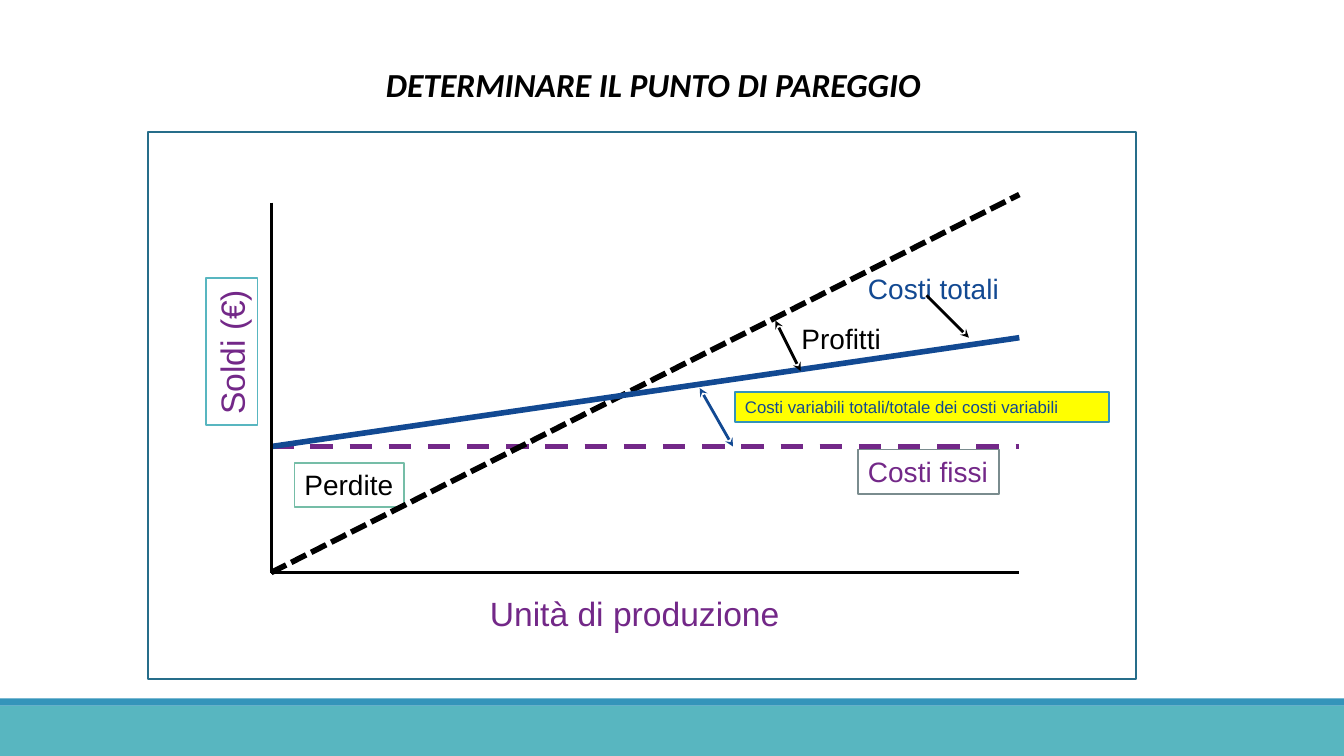
from dataclasses import dataclass

from lxml import etree
from pptx import Presentation
from pptx.dml.color import RGBColor
from pptx.enum.dml import MSO_LINE_DASH_STYLE as Dash
from pptx.enum.shapes import MSO_CONNECTOR as Connector, MSO_SHAPE as Shape
from pptx.enum.text import MSO_ANCHOR as Anchor, MSO_AUTO_SIZE as AutoSize, PP_ALIGN as Align
from pptx.oxml.ns import qn
from pptx.util import Inches, Pt

COLORS = {
    "white": "FFFFFF", "black": "000000", "yellow": "FFFF00",
    "teal": "58B6C0", "blue": "3494BA", "frame": "266D8A",
    "green": "75BDA7", "gray": "7A8C8E", "purple": "732888", "navy": "124992",
}
CELL = 0.1
COLUMNS, ROWS = 133.3, 75


@dataclass
class Box:
    left: float
    top: float
    width: float
    height: float

    def inner(self, left, top, width, height):
        return Box(self.left + left, self.top + top, width, height)

    def point(self, column, row):
        return cells(self.left + column), cells(self.top + row)

    def emu(self):
        return [cells(n) for n in (self.left, self.top, self.width, self.height)]


def cells(count):
    return Inches(count * CELL)


def color(name):
    return RGBColor.from_string(COLORS[name])


def apply(target, values):
    for name, value in values.items():
        setattr(target, name, value)


def add_rectangle(slide, box, fill, outline=None):
    shape = slide.shapes.add_shape(Shape.RECTANGLE, *box.emu())
    shape.shadow.inherit = False
    if fill:
        shape.fill.solid()
        shape.fill.fore_color.rgb = color(fill)
    else:
        shape.fill.background()
    if outline:
        shape.line.color.rgb = color(outline)
        shape.line.width = Pt(1.25)
    else:
        shape.line.fill.background()
    return shape


def add_label(slide, box, text, size, ink, fill=None, outline=None, wrap=False, rotation=0):
    shape = add_rectangle(slide, box, fill, outline)
    shape.rotation = rotation
    apply(shape.text_frame, {
        "word_wrap": wrap, "auto_size": AutoSize.SHAPE_TO_FIT_TEXT,
        "vertical_anchor": Anchor.TOP,
    })
    paragraph = shape.text_frame.paragraphs[0]
    apply(paragraph, {"text": text, "alignment": Align.LEFT})
    apply(paragraph.runs[0].font, {"name": "Arial", "size": Pt(size)})
    paragraph.runs[0].font.color.rgb = color(ink)


def add_line(slide, box, start, end, ink, width, dash=None, arrows=()):
    connector = slide.shapes.add_connector(
        Connector.STRAIGHT, *box.point(*start), *box.point(*end))
    connector.line.color.rgb = color(ink)
    apply(connector.line, {"width": Pt(width), "dash_style": dash})
    line_element = connector.line._get_or_add_ln()
    for arrow in arrows:
        etree.SubElement(line_element, qn(f"a:{arrow}"), type="stealth")
    etree.SubElement(connector._element.spPr, qn("a:effectLst"))


def add_title(slide, box, text):
    title = slide.shapes.title
    apply(title, dict(zip(("left", "top", "width", "height"), box.emu())))
    apply(title.text_frame, {"word_wrap": True, "vertical_anchor": Anchor.MIDDLE})
    paragraph = title.text_frame.paragraphs[0]
    apply(paragraph, {"text": text, "alignment": Align.CENTER})
    font = paragraph.runs[0].font
    apply(font, {"name": "Calibri", "size": Pt(24), "bold": True, "italic": True})
    font.color.rgb = color("black")


def add_footer(slide, box):
    stripe = 0.7
    add_rectangle(slide, box, "teal")
    add_rectangle(slide, box.inner(0, -stripe, box.width, stripe), "blue")


def add_break_even(slide, box):
    left, right = 12.2, 86.4
    base, fixed = 43.7, 31.2
    origin = left, base
    both = "headEnd", "tailEnd"

    def label(place, *style, **options):
        add_label(slide, box.inner(*place), *style, **options)

    def line(start, end, *style, **options):
        add_line(slide, box, start, end, *style, **options)

    add_rectangle(slide, box, "white", "frame")
    label((14.5, 32.8, 10.9, 4.4), "Perdite", 20, "black", "white", "green")
    line((left, fixed), (right, fixed), "purple", 4, Dash.DASH)
    label((70.4, 31.5, 14, 4.4), "Costi fissi", 20, "purple", "white", "gray")
    line(origin, (right, 6.2), "black", 4, Dash.SQUARE_DOT)
    line((left, fixed), (right, 20.4), "navy", 4)
    label((58.2, 25.8, 37.1, 3), "Costi variabili totali/totale dei costi variabili",
          12, "navy", "yellow", "blue", wrap=True)
    line((54.7, 25.4), (58, fixed), "navy", 2, arrows=both)
    label((70.4, 13.3, 15.1, 4.4), "Costi totali", 20, "navy")
    line((77.2, 16.2), (81.4, 20.4), "black", 2, arrows=both[1:])
    line((62.2, 18.7), (64.7, 23.7), "black", 2, arrows=both)
    label((63.8, 18.3, 10, 4.4), "Profitti", 20, "black")
    line((left, 7), origin, "black", 2)
    line(origin, (right, base), "black", 2)
    label((32.9, 45.2, 31, 5.1), "Unità di produzione", 24, "purple", "white")
    label((1, 19.2, 14.6, 5.1), "Soldi (€)", 24, "purple", "white", "teal", rotation=270)


def main():
    presentation = Presentation()
    presentation.slide_width, presentation.slide_height = cells(COLUMNS), cells(ROWS)
    slide = presentation.slides.add_slide(presentation.slide_layouts[5])
    add_footer(slide, Box(0, ROWS - 5, COLUMNS, 5))
    add_break_even(slide, Box(14.7, 13.1, 98, 54.3))
    add_title(slide, Box(14.7, 5.8, 100.2, 5), "DETERMINARE IL PUNTO DI PAREGGIO")
    presentation.save("out.pptx")


if __name__ == "__main__":
    main()
